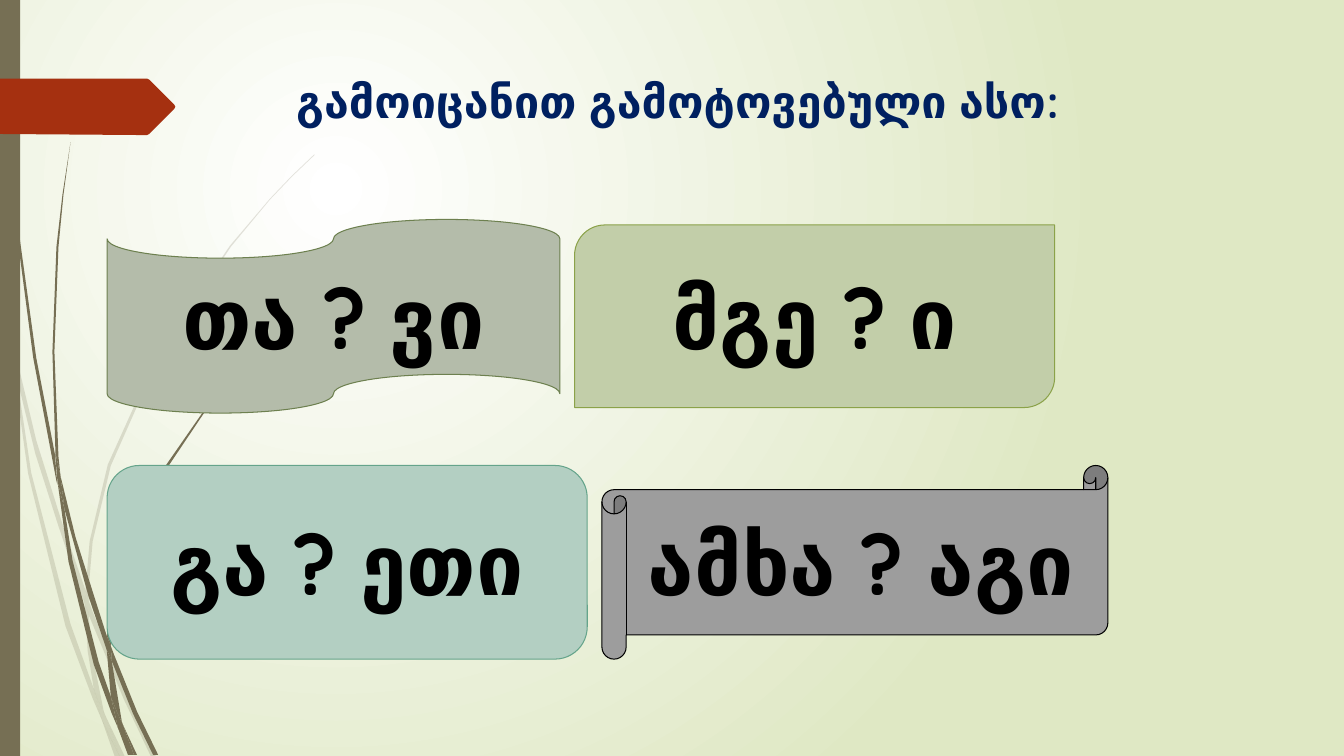
import pptx
import pptx.util
import pptx.dml.color
import pptx.enum.shapes
import pptx.enum.text
import pptx.oxml
from pptx.oxml.ns import nsdecls, qn

Cm = pptx.util.Cm
Pt = pptx.util.Pt
PRESET = pptx.enum.shapes.MSO_SHAPE

FONT = "Quicksand"
COLORS = {
    "glow": "FFFFFF", "meadow": "DFE8C4", "stem": "766F54", "tag": "A53010",
    "heading": "002060", "letters": "000000",
}

HEADING = "გამოიცანით გამოტოვებული ასო:"
HEADING_BOX = (7.21, 1.73, 24.77, 3.56)

# word, preset, (left, top, width, height) in cm, fill, line
WORD_CARDS = [
    ("თა ? ვი", PRESET.FLOWCHART_PUNCHED_TAPE,
     (2.7, 5.53, 11.41, 4.88), "B4BCAA", "6D804F"),
    ("ამხა ? აგი", PRESET.HORIZONTAL_SCROLL,
     (15.17, 11.73, 12.75, 4.88), "9D9D9D", "000000"),
    ("გა ? ეთი", PRESET.ROUNDED_RECTANGLE,
     (2.7, 11.73, 12.1, 4.88), "B3CFC2", "65A48B"),
    ("მგე ? ი", PRESET.ROUND_2_DIAG_RECTANGLE,
     (14.48, 5.67, 12.1, 4.6), "C2CEA9", "8BA249"),
]

# Outlines are (x, y) corners on a fine grid
GRID_CM = 0.0254
PALE_BLADES = [
    [(11, 350), (9, 322), (0, 282), (0, 299), (10, 344)],
    [(58, 522), (84, 599), (85, 586), (62, 520), (36, 437), (14, 345),
     (17, 376), (35, 450)],
    [(92, 607), (88, 596), (88, 610), (123, 694), (150, 751), (155, 751),
     (127, 692)],
    [(119, 751), (124, 751), (105, 711)],
    [(93, 683), (70, 619), (31, 469), (17, 376), (11, 350), (28, 470),
     (65, 621), (92, 693), (101, 714), (99, 707)],
    [(84, 599), (87, 646), (93, 683), (96, 692), (105, 711), (103, 706),
     (91, 646), (88, 610), (88, 608)],
    [(88, 584), (92, 537), (110, 462), (160, 349), (229, 245), (268, 198),
     (290, 175), (312, 154), (312, 153), (289, 175), (268, 197), (228, 244),
     (158, 348), (107, 461), (89, 537), (85, 584), (85, 586), (88, 596)],
    [(101, 714), (114, 751), (119, 751)],
    [(88, 608), (88, 610), (88, 596), (85, 586), (84, 599)],
    [(96, 692), (93, 683), (99, 707), (101, 714), (119, 751), (105, 711)],
]
DARK_BLADES = [
    [(7, 110), (17, 233), (33, 355), (56, 477), (57, 481), (55, 457),
     (55, 453), (36, 355), (19, 232), (8, 109), (5, 48), (4, 0), (3, 0),
     (4, 48)],
    [(88, 592), (106, 645), (106, 633), (106, 631), (93, 590), (75, 533),
     (60, 472), (64, 505)],
    [(113, 649), (110, 641), (111, 656), (132, 708), (152, 749), (157, 749),
     (136, 706)],
    [(110, 691), (98, 657), (72, 556), (64, 505), (57, 477), (68, 557),
     (93, 659), (111, 708), (117, 722), (116, 717)],
    [(60, 472), (58, 453), (54, 349), (58, 245), (63, 193), (70, 141),
     (62, 193), (56, 245), (52, 349), (55, 449)],
    [(133, 749), (136, 749), (122, 719)],
    [(57, 477), (64, 505), (60, 472), (55, 449), (55, 453)],
    [(111, 633), (115, 592), (125, 552), (158, 476), (205, 406), (231, 374),
     (245, 359), (261, 344), (260, 344), (245, 358), (231, 373), (204, 405),
     (156, 474), (122, 551), (110, 591), (106, 631), (110, 641)],
    [(117, 722), (127, 749), (131, 749)],
    [(106, 645), (110, 691), (116, 706), (122, 719), (121, 716), (111, 656),
     (109, 651)],
    [(106, 645), (109, 651), (111, 656), (110, 641), (106, 631), (106, 633)],
    [(116, 706), (110, 691), (116, 717), (117, 722), (130, 749), (133, 749),
     (122, 719)],
]
TAG = [(174, 106), (173, 108), (148, 133), (146, 134), (136, 134), (0, 133),
       (0, 78), (136, 78), (146, 78), (148, 79), (173, 104)]


def paint(fill, color):
    fill.solid()
    fill.fore_color.rgb = pptx.dml.color.RGBColor.from_string(color)


def style_text(frame, size, color):
    for run in frame.paragraphs[0].runs:
        run.font.name = FONT
        run.font.size = Pt(size)
        run.font.bold = True
        run.font.color.rgb = pptx.dml.color.RGBColor.from_string(color)


def add_outline(shapes, corners, fill, opacity=100):
    points = [(Cm(x * GRID_CM), Cm(y * GRID_CM)) for x, y in corners]
    builder = shapes.build_freeform(*points[0])
    builder.add_line_segments(points[1:], close=True)
    outline = builder.convert_to_shape()
    outline.shadow.inherit = False
    paint(outline.fill, fill)
    outline.line.fill.background()
    if opacity < 100:
        color = outline._element.spPr.find(qn("a:solidFill"))[0]
        color.append(pptx.oxml.parse_xml(
            f'<a:alpha {nsdecls("a")} val="{opacity * 1000}"/>'))


def add_preset(shapes, preset, box, fill, line=None):
    shape = shapes.add_shape(preset, *map(Cm, box))
    shape.shadow.inherit = False
    paint(shape.fill, fill)
    if line:
        paint(shape.line.fill, line)
        shape.line.width = Pt(0.75)
    else:
        shape.line.fill.background()
    return shape


def set_background(slide):
    fill = slide.background.fill
    fill.gradient()
    for stop, name in zip(fill.gradient_stops, ("glow", "meadow")):
        stop.color.rgb = pptx.dml.color.RGBColor.from_string(COLORS[name])
    direction = next(slide._element.iter(qn("a:lin")))
    direction.getparent().replace(direction, pptx.oxml.parse_xml(
        f'<a:path {nsdecls("a")} path="circle">'
        '<a:fillToRect l="50000" t="50000" r="100000" b="100000"/></a:path>'))


def main():
    deck = pptx.Presentation()
    deck.slide_width, deck.slide_height = Cm(33.87), Cm(19.05)
    slide = deck.slides.add_slide(deck.slide_layouts[5])
    shapes = slide.shapes
    set_background(slide)

    for blades, opacity in ((PALE_BLADES, 20), (DARK_BLADES, 100)):
        for blade in blades:
            add_outline(shapes, blade, COLORS["stem"], opacity)
    add_preset(shapes, PRESET.RECTANGLE, (0, 0, 0.51, 19.05), COLORS["stem"])
    add_outline(shapes, TAG, COLORS["tag"])

    heading = shapes.title
    heading.left, heading.top, heading.width, heading.height = map(Cm, HEADING_BOX)
    frame = heading.text_frame
    frame.text = HEADING
    frame.word_wrap = True
    frame.auto_size = pptx.enum.text.MSO_AUTO_SIZE.NONE
    frame.vertical_anchor = pptx.enum.text.MSO_ANCHOR.TOP
    frame.paragraphs[0].alignment = pptx.enum.text.PP_ALIGN.LEFT
    style_text(frame, 32, COLORS["heading"])

    for word, preset, box, fill, line in WORD_CARDS:
        card = add_preset(shapes, preset, box, fill, line)
        card.text_frame.text = word
        card.text_frame.vertical_anchor = pptx.enum.text.MSO_ANCHOR.MIDDLE
        card.text_frame.paragraphs[0].alignment = pptx.enum.text.PP_ALIGN.CENTER
        style_text(card.text_frame, 60, COLORS["letters"])

    deck.save("out.pptx")


if __name__ == "__main__":
    main()
